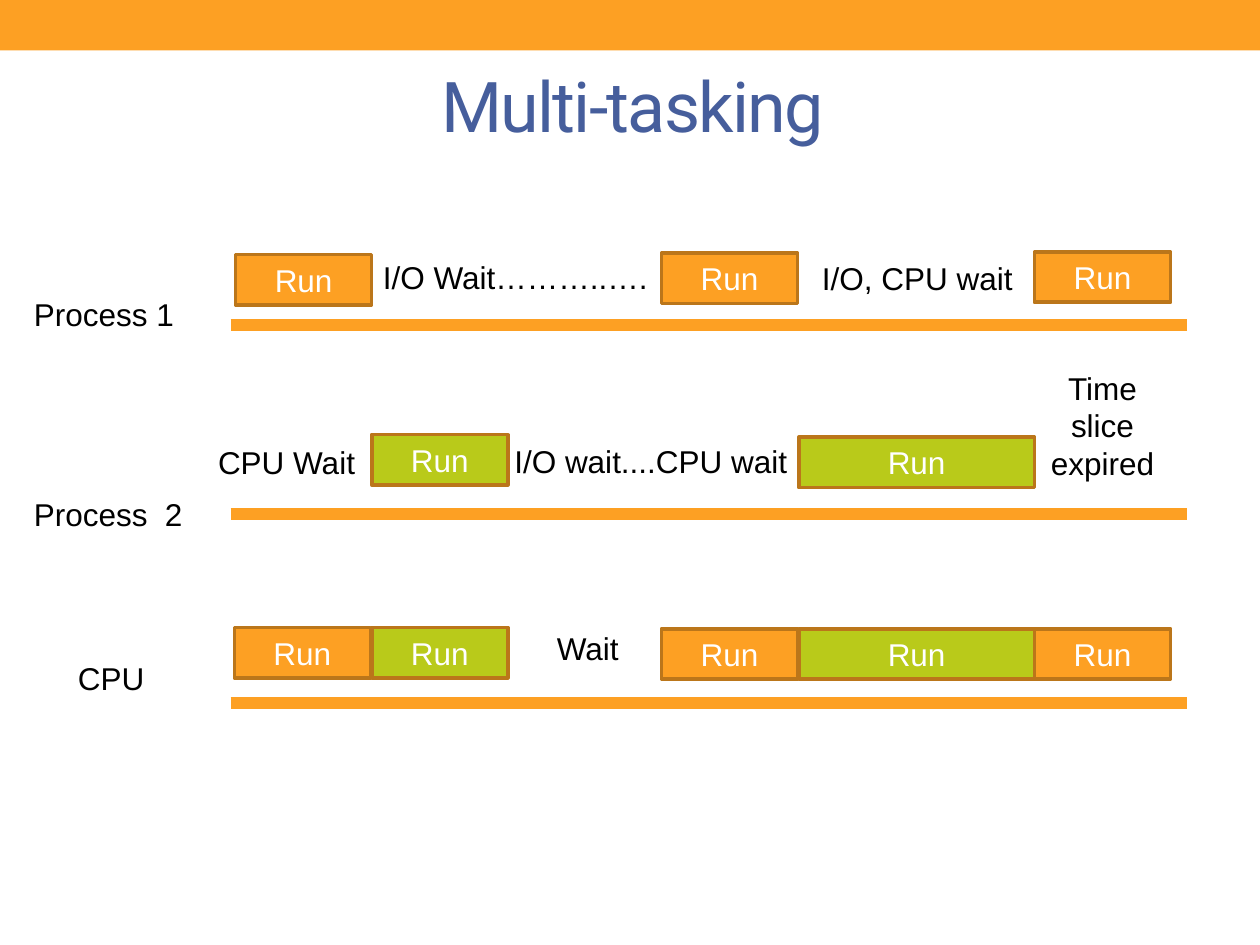
from typing import NamedTuple

from pptx import Presentation
from pptx.dml.color import RGBColor
from pptx.enum import shapes, text
from pptx.oxml import ns
from pptx.util import Inches, Pt
from lxml import etree

ORANGE, GREEN, BROWN = "FDA023", "B9CA1A", "BB761A"
BLUE, BLACK, WHITE = "465E9C", "000000", "FFFFFF"
BOX_H = 0.4
LABEL_H = 0.41


class Run(NamedTuple):
    """A period in which a process holds the CPU."""
    left: float
    top: float
    width: float
    color: str


class Label(NamedTuple):
    """A row name or a waiting period."""
    words: str
    left: float
    top: float
    width: float
    height: float = LABEL_H


TIMELINES = [2.58, 4.08, 5.58]

ROW_NAMES = [
    Label("Process 1", 0.17, 2.29, 1.42, 0.4),
    Label("Process  2", 0.17, 3.88, 1.42, 0.4),
    Label("CPU", 0.52, 5.18, 0.86, 0.4),
]

RUNS = [
    # Process 1
    Run(1.87, 2.02, 1.08, ORANGE),
    Run(5.25, 2.01, 1.08, ORANGE),
    Run(8.21, 2.0, 1.08, ORANGE),
    # Process 2
    Run(2.95, 3.45, 1.08, GREEN),
    Run(6.34, 3.47, 1.87, GREEN),
    # CPU
    Run(1.86, 4.98, 1.08, ORANGE),
    Run(2.95, 4.98, 1.08, GREEN),
    Run(5.25, 4.99, 1.08, ORANGE),
    Run(6.34, 4.99, 1.87, GREEN),
    Run(8.21, 4.99, 1.08, ORANGE),
]

WAITS = [
    Label("I/O Wait………..….", 2.92, 1.99, 2.34),
    Label("I/O, CPU wait", 6.34, 2.0, 1.88),
    Label("CPU Wait", 1.61, 3.46, 1.33),
    Label("I/O wait....CPU wait", 3.92, 3.45, 2.49),
    Label("Time slice expired", 8.21, 2.87, 1.08, 1.01),
    Label("Wait", 4.0, 4.94, 1.33),
]


def rgb(value: str) -> RGBColor:
    return RGBColor.from_string(value)


def write(sp, words: str, color: str, size: float = 18, font: str = "Arial",
          centred: bool = True):
    """Put one formatted run into a shape and return it."""
    tf = sp.text_frame
    tf.word_wrap = True
    if centred:
        tf.vertical_anchor = text.MSO_ANCHOR.MIDDLE
    p = tf.paragraphs[0]
    p.alignment = text.PP_ALIGN.CENTER if centred else text.PP_ALIGN.LEFT
    r = p.add_run()
    r.text = words
    r.font.name = font
    r.font.size = Pt(size)
    r.font.color.rgb = rgb(color)
    return r


def add_box(s, left: float, top: float, width: float, height: float, fill: str):
    sp = s.shapes.add_shape(shapes.MSO_SHAPE.RECTANGLE, Inches(left), Inches(top),
                            Inches(width), Inches(height))
    sp.shadow.inherit = False
    sp.fill.solid()
    sp.fill.fore_color.rgb = rgb(fill)
    sp.line.fill.background()
    return sp


def add_run_box(s, run: Run) -> None:
    sp = add_box(s, run.left, run.top, run.width, BOX_H, run.color)
    sp.line.color.rgb = rgb(BROWN)
    sp.line.width = Pt(2.08)
    write(sp, "Run", WHITE)


def add_label(s, label: Label, centred: bool) -> None:
    sp = s.shapes.add_textbox(Inches(label.left), Inches(label.top),
                              Inches(label.width), Inches(label.height))
    write(sp, label.words, BLACK, centred=centred)


def add_timeline(s, y: float) -> None:
    line = s.shapes.add_connector(shapes.MSO_CONNECTOR.STRAIGHT, Inches(1.83),
                                  Inches(y), Inches(9.42), Inches(y))
    line.line.color.rgb = rgb(ORANGE)
    line.line.width = Pt(7)
    etree.SubElement(line._element.spPr, ns.qn("a:effectLst"))


def main() -> None:
    prs = Presentation()
    prs.slide_width, prs.slide_height = Inches(10), Inches(7.5)
    s = prs.slides.add_slide(prs.slide_layouts[5])

    # Top band and title
    add_box(s, 0, 0, 10, 0.4, ORANGE)
    title = s.shapes.title
    title.left, title.top = Inches(0.52), Inches(0.29)
    title.width, title.height = Inches(9), Inches(1.08)
    r = write(title, "Multi-tasking", BLUE, 40, "Roboto")
    r.font._element.set("spc", "-100")

    # Timelines with their names
    for y in TIMELINES:
        add_timeline(s, y)
    for name in ROW_NAMES:
        add_label(s, name, centred=False)

    # Running and waiting periods
    for run in RUNS:
        add_run_box(s, run)
    for wait in WAITS:
        add_label(s, wait, centred=True)

    prs.save("out.pptx")


if __name__ == "__main__":
    main()
